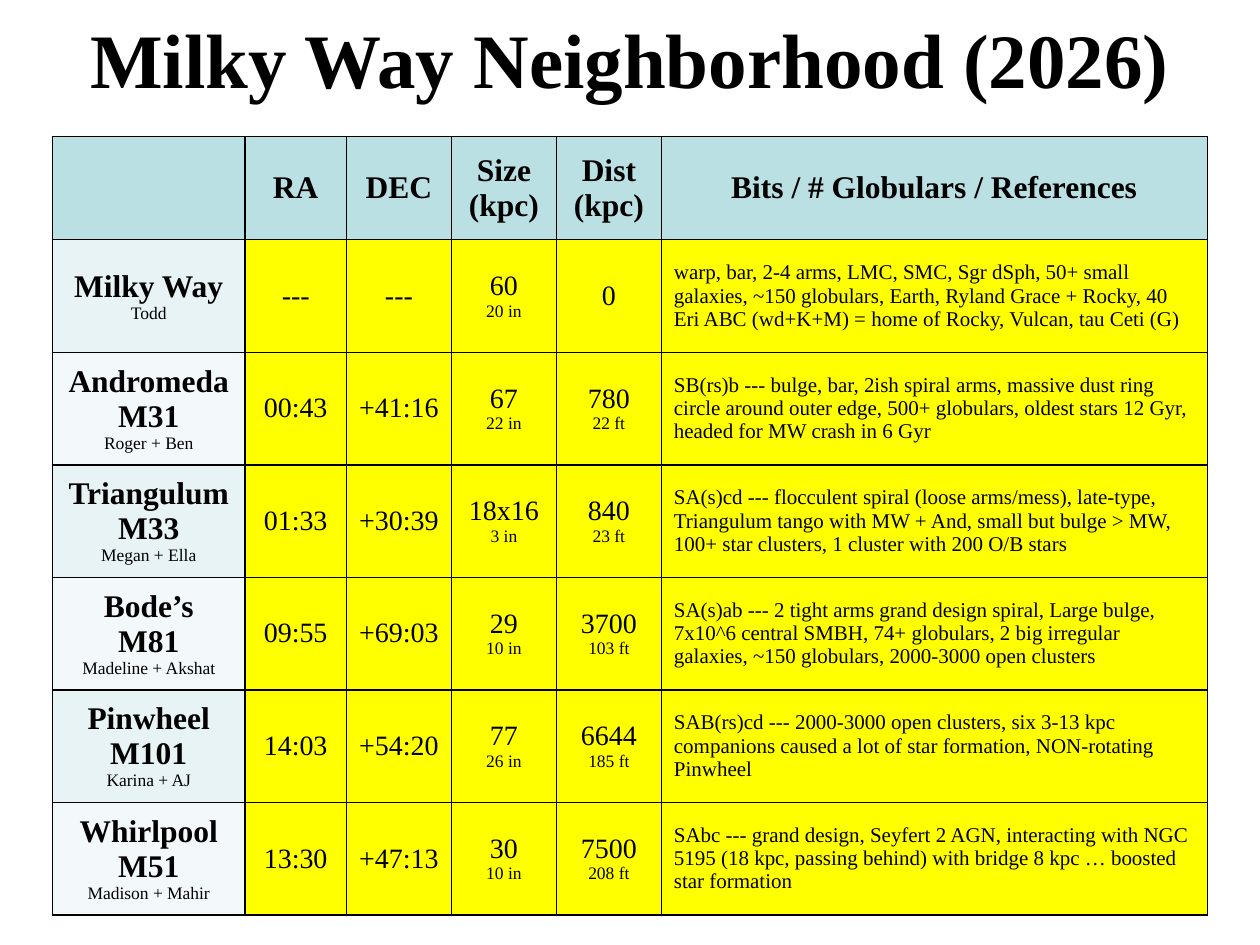
"""Build the Milky Way Neighborhood table slide."""
from lxml import etree
from pptx import Presentation
from pptx.dml.color import RGBColor
from pptx.enum.text import MSO_ANCHOR, PP_ALIGN
from pptx.oxml.ns import qn
from pptx.util import Pt

CENTER, LEFT, MIDDLE = PP_ALIGN.CENTER, PP_ALIGN.LEFT, MSO_ANCHOR.MIDDLE
FONT = "Times New Roman"
COLORS = {"ink": "000000", "header": "BBE0E3", "odd": "E7F3F4",
          "even": "F3F9FA", "data": "FFFF00"}

TITLE = "Milky Way Neighborhood (2026)"
HEADERS = [[], ["RA"], ["DEC"], ["Size", "(kpc)"], ["Dist (kpc)"],
           ["Bits / # Globulars / References"]]
GALAXIES = [
    (["Milky Way"], "Todd", "---", "---", ["60", "20 in"], ["0"],
     "warp, bar, 2-4 arms, LMC, SMC, Sgr dSph, 50+ small galaxies, ~150 globulars, "
     "Earth, Ryland Grace + Rocky, 40 Eri ABC (wd+K+M) = home of Rocky, Vulcan, tau Ceti (G)"),
    (["Andromeda", "M31"], "Roger + Ben", "00:43", "+41:16", ["67", "22 in"], ["780", "22 ft"],
     "SB(rs)b --- bulge, bar, 2ish spiral arms, massive dust ring circle around outer edge, "
     "500+ globulars, oldest stars 12 Gyr, headed for MW crash in 6 Gyr"),
    (["Triangulum", "M33"], "Megan + Ella", "01:33", "+30:39", ["18x16", "3 in"], ["840", "23 ft"],
     "SA(s)cd --- flocculent spiral (loose arms/mess), late-type, Triangulum tango with "
     "MW + And, small but bulge > MW, 100+ star clusters, 1 cluster with 200 O/B stars"),
    (["Bode’s", "M81"], "Madeline + Akshat", "09:55", "+69:03", ["29", "10 in"], ["3700", "103 ft"],
     "SA(s)ab --- 2 tight arms grand design spiral, Large bulge, 7x10^6 central SMBH, "
     "74+ globulars, 2 big irregular galaxies, ~150 globulars, 2000-3000 open clusters"),
    (["Pinwheel", "M101"], "Karina + AJ", "14:03", "+54:20", ["77", "26 in"], ["6644", "185 ft"],
     "SAB(rs)cd --- 2000-3000 open clusters, six 3-13 kpc companions caused a lot of "
     "star formation, NON-rotating Pinwheel"),
    (["Whirlpool", "M51"], "Madison + Mahir", "13:30", "+47:13", ["30", "10 in"], ["7500", "208 ft"],
     "SAbc --- grand design, Seyfert 2 AGN, interacting with NGC 5195 (18 kpc, passing "
     "behind) with bridge 8 kpc … boosted star formation"),
]
COL_WIDTHS = [110, 58, 60, 60, 60, 312]
HEADER_HEIGHT, ROW_HEIGHT = 59, 64.3
TABLE_LEFT, TABLE_TOP = 30, 78


def write(tf, lines, size=18, bold=False, align=CENTER, small_last=False):
    """Write one paragraph per line, optionally with a small plain last line."""
    for i, text in enumerate(lines):
        p = tf.paragraphs[0] if i == 0 else tf.add_paragraph()
        p.alignment = align
        r = p.add_run()
        r.text = text
        small = small_last and i == len(lines) - 1
        r.font.name = FONT
        r.font.size = Pt(10 if small else size)
        r.font.bold = bold and not small
        r.font.color.rgb = RGBColor.from_string(COLORS["ink"])


def style_cell(cell, fill):
    """Give a cell its borders, fill and vertical centring."""
    cell.vertical_anchor = MIDDLE
    tc_pr = cell._tc.get_or_add_tcPr()
    for side in ("a:lnL", "a:lnR", "a:lnT", "a:lnB"):
        ln = etree.SubElement(tc_pr, qn(side), w=str(Pt(1)))
        solid = etree.SubElement(ln, qn("a:solidFill"))
        etree.SubElement(solid, qn("a:srgbClr"), val=COLORS["ink"])
    cell.fill.solid()
    cell.fill.fore_color.rgb = RGBColor.from_string(COLORS[fill])


def main():
    """Create the slide and save it."""
    prs = Presentation()
    prs.slide_width, prs.slide_height = Pt(720), Pt(540)
    s = prs.slides.add_slide(prs.slide_layouts[5])

    title = s.shapes.title
    title.left, title.top, title.width, title.height = Pt(0), Pt(0), Pt(720), Pt(66)
    title.text_frame.vertical_anchor = MIDDLE
    write(title.text_frame, [TITLE], size=44, bold=True)

    height = HEADER_HEIGHT + ROW_HEIGHT * len(GALAXIES)
    table = s.shapes.add_table(len(GALAXIES) + 1, len(COL_WIDTHS), Pt(TABLE_LEFT),
                               Pt(TABLE_TOP), Pt(sum(COL_WIDTHS)), Pt(height)).table
    for col, width in zip(table.columns, COL_WIDTHS):
        col.width = Pt(width)
    for i, row in enumerate(table.rows):
        row.height = Pt(ROW_HEIGHT if i else HEADER_HEIGHT)

    for c, lines in enumerate(HEADERS):
        cell = table.cell(0, c)
        style_cell(cell, "header")
        write(cell.text_frame, lines, bold=True)

    for i, (names, team, ra, dec, size, dist, notes) in enumerate(GALAXIES, 1):
        cells = [table.cell(i, c) for c in range(len(COL_WIDTHS))]
        for c, cell in enumerate(cells):
            style_cell(cell, "data" if c else "odd" if i % 2 else "even")
        write(cells[0].text_frame, names + [team], bold=True, small_last=True)
        for cell, lines in zip(cells[1:5], ([ra], [dec], size, dist)):
            write(cell.text_frame, lines, size=16, small_last=len(lines) > 1)
        write(cells[5].text_frame, [notes], size=12, align=LEFT)

    prs.save("out.pptx")


if __name__ == "__main__":
    main()
